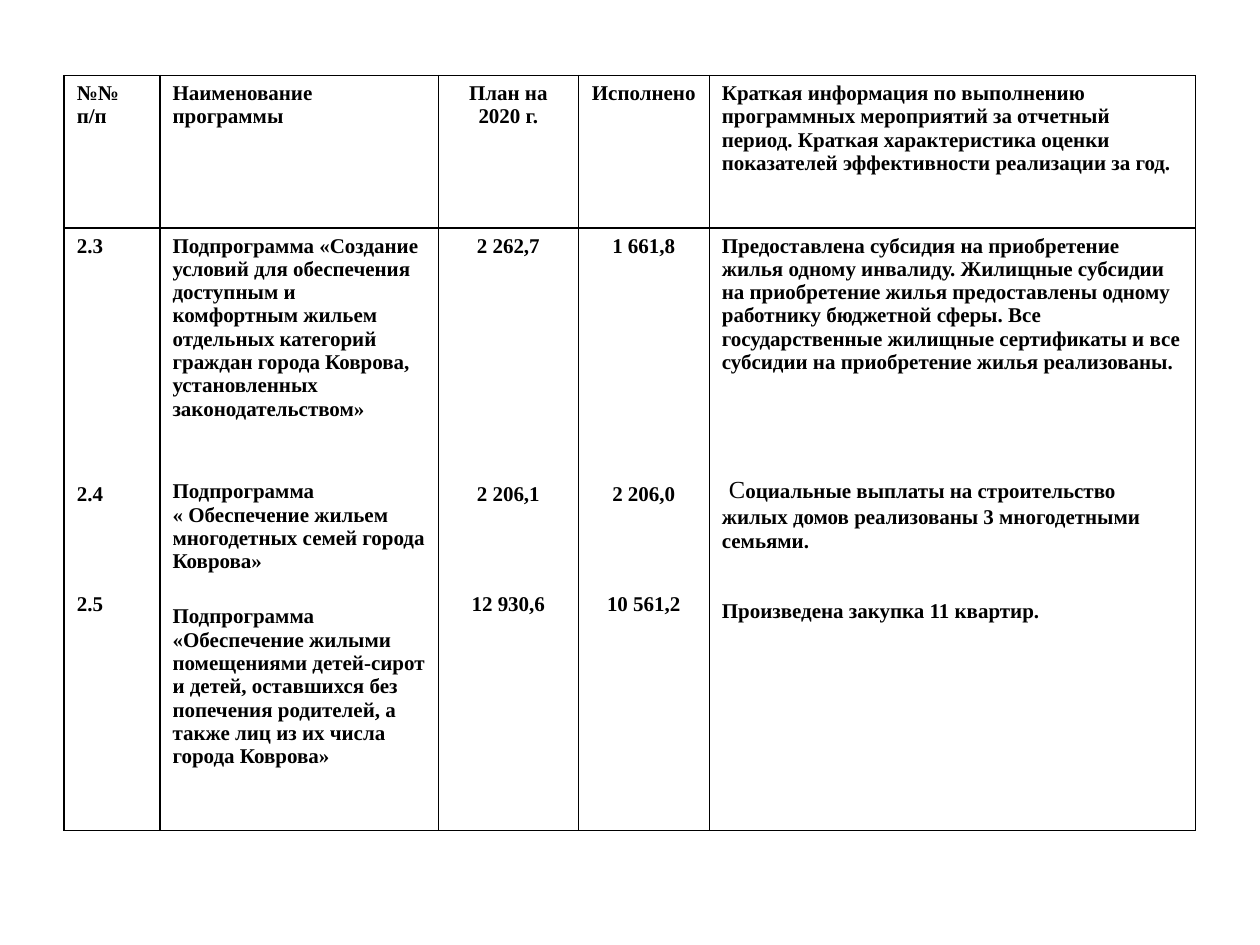
from dataclasses import dataclass

from lxml.etree import SubElement
from pptx import Presentation
from pptx.dml.color import RGBColor
from pptx.enum.text import PP_ALIGN as Align
from pptx.oxml.ns import qn
from pptx.util import Inches, Pt


@dataclass(frozen=True)
class Theme:
    """Colours, fonts and type sizes of the slide."""
    ink: str = "000000"
    font: str = "Times New Roman"
    accent_font: str = "Cabin"
    size: float = 12
    initial_size: float = 14
    indent_size: float = 18
    line: float = 13.35
    space: float = 2.4
    border: float = 1


THEME = Theme()
COLUMNS = [0.76, 2.21, 1.11, 1.04, 3.86]
ROWS = [1.21, 4.78]
ALIGNS = [Align.LEFT, Align.LEFT, Align.CENTER, Align.CENTER, Align.LEFT]
HEADERS = [
    "№№ п/п",
    "Наименование программы",
    "План на 2020 г.",
    "Исполнено",
    "Краткая информация по выполнению программных мероприятий за отчетный период. "
    "Краткая характеристика оценки показателей эффективности реализации за год.",
]
NUMBERS = ["2.3", "2.4", "2.5"]
PROGRAMS = [
    "Подпрограмма «Создание условий для обеспечения доступным и комфортным жильем "
    "отдельных категорий граждан города Коврова, установленных законодательством»",
    "Подпрограмма\v« Обеспечение жильем многодетных семей города Коврова»",
    "Подпрограмма «Обеспечение жилыми помещениями детей-сирот и детей, оставшихся "
    "без попечения родителей, а также лиц из их числа города Коврова»",
]
PLANNED = ["2 262,7", "2 206,1", "12 930,6"]
SPENT = ["1 661,8", "2 206,0", "10 561,2"]
RESULTS = [
    "Предоставлена субсидия на приобретение жилья одному инвалиду. Жилищные субсидии "
    "на приобретение жилья предоставлены одному работнику бюджетной сферы. Все "
    "государственные жилищные сертификаты и все субсидии на приобретение жилья реализованы.",
    [
        (" ", {"name": THEME.accent_font, "size": Pt(THEME.indent_size), "bold": False}),
        ("С", {"size": Pt(THEME.initial_size), "bold": False}),
        ("оциальные выплаты на строительство жилых домов реализованы "
         "3 многодетными семьями.", {}),
    ],
    "Произведена закупка 11 квартир.",
]


def gaps(skipped, space):
    """Turn counts of skipped lines into space before each paragraph."""
    return [0] + [count * (THEME.line + space) + space for count in skipped]


def style_font(font, **changes):
    """Apply the theme's type to a font, with any changes."""
    values = {"name": THEME.font, "size": Pt(THEME.size), "bold": True} | changes
    for name, value in values.items():
        setattr(font, name, value)
    font.color.rgb = RGBColor.from_string(THEME.ink)


def write_paragraph(para, content, align, before):
    """Write plain text or a list of formatted spans into a paragraph."""
    values = {"alignment": align, "space_before": Pt(before)}
    for name, value in values.items():
        setattr(para, name, value)
    if isinstance(content, str):
        para.text = content
        spans = [(span, {}) for span in para.runs]
    else:
        spans = []
        for text, changes in content:
            span = para.add_run()
            span.text = text
            spans.append((span, changes))
    for span, changes in spans:
        style_font(span.font, **changes)


def write_cell(cell, items, align, spacing):
    """Fill a table cell with evenly styled paragraphs."""
    frame = cell.text_frame
    for index, (item, before) in enumerate(zip(items, spacing)):
        para = frame.add_paragraph() if index else frame.paragraphs[0]
        write_paragraph(para, item, align, before)


def frame_cell(cell):
    """Draw the four borders of a cell and clear its fill."""
    properties = cell._tc.get_or_add_tcPr()
    for side in ("a:lnL", "a:lnR", "a:lnT", "a:lnB"):
        line = SubElement(properties, qn(side), w=str(Pt(THEME.border)))
        fill = SubElement(line, qn("a:solidFill"))
        SubElement(fill, qn("a:srgbClr"), val=THEME.ink)
    cell.fill.background()


def add_program_table(page):
    """Add the table of subprograms with its header row."""
    table = page.shapes.add_table(
        len(ROWS), len(COLUMNS), Inches(0.51), Inches(0.6),
        Inches(sum(COLUMNS)), Inches(sum(ROWS)),
    ).table
    for name in ("first_row", "horz_banding"):
        setattr(table, name, False)
    for column, width in zip(table.columns, COLUMNS):
        column.width = Inches(width)
    for row, height in zip(table.rows, ROWS):
        row.height = Inches(height)

    figure_gaps = gaps([8, 3], THEME.space)
    program_gaps = gaps([2, 1], THEME.space)
    result_gaps = gaps([4, 2], 0)
    body = [NUMBERS, PROGRAMS, PLANNED, SPENT, RESULTS]
    spacing = [figure_gaps, program_gaps, figure_gaps, figure_gaps, result_gaps]
    for index, align in enumerate(ALIGNS):
        write_cell(table.cell(0, index), [HEADERS[index]], align, [0])
        write_cell(table.cell(1, index), body[index], align, spacing[index])
    for cell in table.iter_cells():
        frame_cell(cell)


def main():
    """Build the slide and save the deck."""
    deck = Presentation()
    deck.slide_width, deck.slide_height = Inches(10), Inches(7.5)
    page = deck.slides.add_slide(deck.slide_layouts[6])
    add_program_table(page)
    deck.save("out.pptx")


if __name__ == "__main__":
    main()
